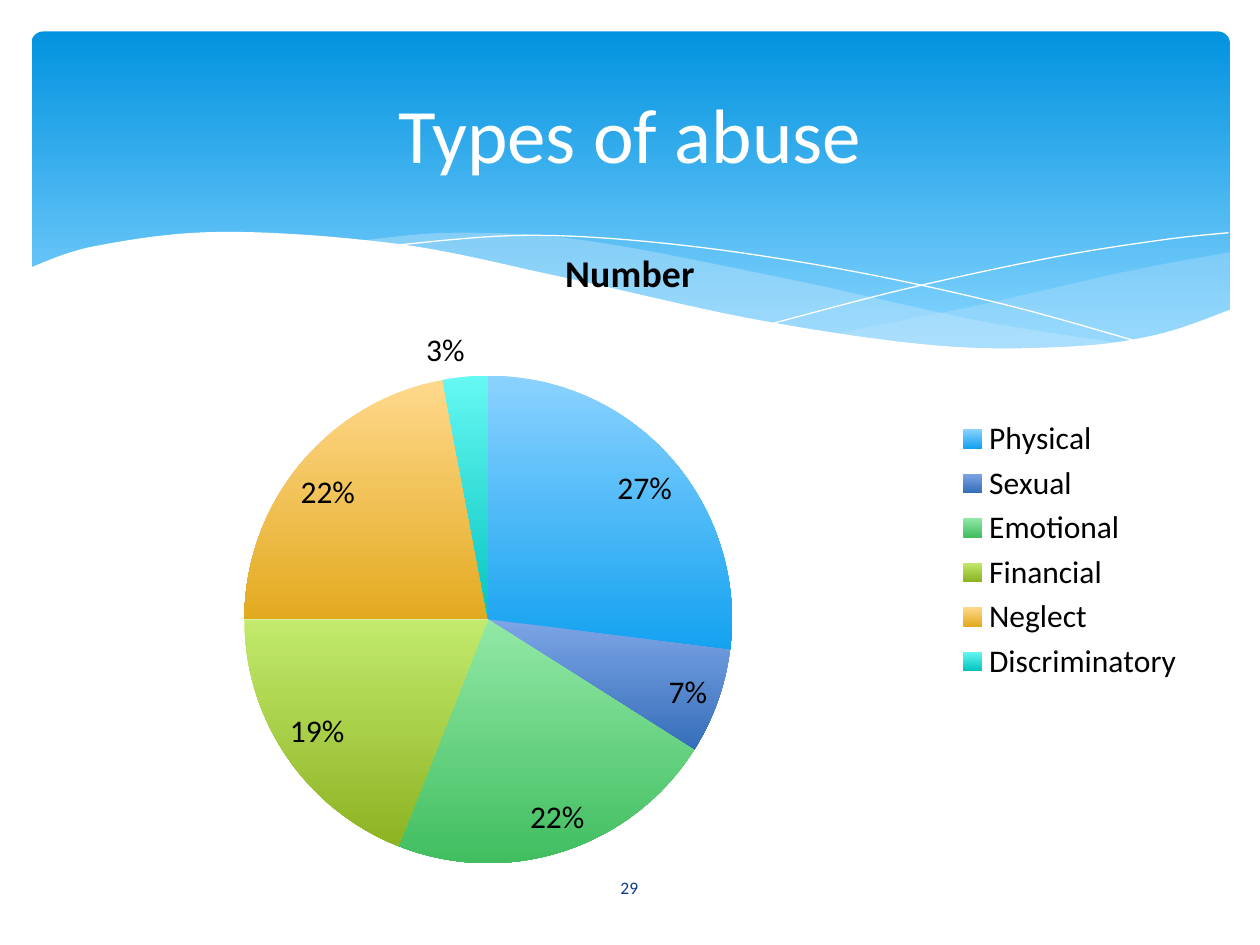
import pptx
import pptx.chart.data
import pptx.dml.color
import pptx.enum.chart
import pptx.enum.shapes
import pptx.enum.text
import pptx.oxml
import pptx.oxml.ns
import pptx.util
import lxml.etree

Pt = pptx.util.Pt


def rgb(value):
    return pptx.dml.color.RGBColor.from_string(value)


def write(frame, text, size=18, color="000000", bold=False):
    frame.text = text
    frame.word_wrap = True
    frame.vertical_anchor = pptx.enum.text.MSO_ANCHOR.MIDDLE
    paragraph = frame.paragraphs[0]
    paragraph.alignment = pptx.enum.text.PP_ALIGN.CENTER
    font = paragraph.runs[0].font
    font.name = "Calibri"
    font.size = Pt(size)
    font.bold = bold
    font.color.rgb = rgb(color)


deck = pptx.Presentation()
deck.slide_width, deck.slide_height = Pt(720), Pt(540)
slide = deck.slides.add_slide(deck.slide_layouts[5])
shapes = slide.shapes

banner = shapes.add_shape(pptx.enum.shapes.MSO_SHAPE.ROUNDED_RECTANGLE,
                          Pt(18), Pt(18), Pt(684.7), Pt(194.4))
banner.adjustments[0] = 0.034
banner.shadow.inherit = False
banner.line.fill.background()
gradients = [(banner.fill, "0293E0", "83D3FE", 0.9)]

left_edge, right_edge, wave_floor = 17, 703, 237
right_start, middle_start, middle_end = (476, 191), (206, 137.5), (643, 196.5)
knots = {
    "right top": [right_start, (561, 174), (642, 155.5), (right_edge, 144)],
    "right bottom": [right_start, (536, 198), (586, 200), (640, 196), (673, 188.5),
                     (right_edge, 178)],
    "middle top": [middle_start, (260, 133), (335, 137.5), (453, 160), (558, 183), middle_end],
    "middle bottom": [middle_start, (291, 152), (408, 178.5), (520, 197.5), (581, 200),
                      middle_end],
    "falling": [(222, 140.5), (300, 134.5), (384, 139.5), (479, 153.5), (572, 173.5),
                (653, 196)],
    "rising": [(441, 185), (518, 165), (602, 147), (665, 137), (702, 133)],
    "white top": [(left_edge, 153), (55, 140.5), (127, 132.5), (228, 139.5), (322, 158.5),
                  (434, 183), (536, 197.5), (612, 198), (662, 191), (right_edge, 177)],
}

# Catmull-Rom
steps = 10
curves = {}
for name, anchors in knots.items():
    padded = [anchors[0], *anchors, anchors[-1]]
    curve = []
    for before, start, end, after in zip(padded, padded[1:], padded[2:], padded[3:]):
        for step in range(steps):
            t = step / steps
            curve.append(tuple(
                Pt(b + t * ((c - a) + t * ((2 * a - 5 * b + 4 * c - d)
                                           + t * (3 * b - a - 3 * c + d))) / 2)
                for a, b, c, d in zip(before, start, end, after)))
    curves[name] = curve + [(Pt(anchors[-1][0]), Pt(anchors[-1][1]))]

white_base = [(Pt(right_edge), Pt(wave_floor)), (Pt(left_edge), Pt(wave_floor))]
bands = [
    (curves["right top"] + curves["right bottom"][::-1], "C6E7FC", 29),
    (curves["middle top"] + curves["middle bottom"][::-1], "C6E7FC", 40),
    (curves["falling"], None, 100),
    (curves["rising"], None, 100),
    (curves["white top"] + white_base, "FFFFFF", 100),
]
for outline, color, opacity in bands:
    builder = shapes.build_freeform(*outline[0])
    builder.add_line_segments(outline[1:], close=color is not None)
    wave = builder.convert_to_shape()
    wave.shadow.inherit = False
    if color is None:
        wave.fill.background()
        wave.line.color.rgb = rgb("FFFFFF")
        wave.line.width = Pt(0)
        continue
    wave.line.fill.background()
    wave.fill.solid()
    wave.fill.fore_color.rgb = rgb(color)
    if opacity < 100:
        tone = wave.element.spPr.find(".//" + pptx.oxml.ns.qn("a:srgbClr"))
        lxml.etree.SubElement(tone, pptx.oxml.ns.qn("a:alpha"), val=str(opacity * 1000))

title = shapes.title
title.left, title.top, title.width, title.height = Pt(36), Pt(26.64), Pt(648), Pt(98.64)
write(title.text_frame, "Types of abuse", size=44, color="FFFFFF")
shapes.element.append(title.element)

abuse_types = [
    ("Physical", 27, "8AD2FF", "14A2F0"),
    ("Sexual", 7, "7DA5E6", "356EB9"),
    ("Emotional", 22, "92E8A6", "41BE60"),
    ("Financial", 19, "C2EA6C", "8CB322"),
    ("Neglect", 22, "FFD98C", "E3AA20"),
    ("Discriminatory", 3, "66F8F2", "05C4C0"),
]
abuse_data = pptx.chart.data.CategoryChartData()
abuse_data.categories = [name for name, share, light, dark in abuse_types]
abuse_data.add_series("Number", [share for name, share, light, dark in abuse_types])
pie = shapes.add_chart(pptx.enum.chart.XL_CHART_TYPE.PIE, Pt(36), Pt(125.28), Pt(648), Pt(378),
                       abuse_data).chart
pie.font.name = "Calibri"
pie.font.size = Pt(18)
pie.font.color.rgb = rgb("000000")
pie.has_title = True
write(pie.chart_title.text_frame, "Number", size=21.6, bold=True)
pie.chart_title.include_in_layout = False
pie.has_legend = True
pie.legend.position = pptx.enum.chart.XL_LEGEND_POSITION.RIGHT
pie.legend.include_in_layout = False

plot = pie.plots[0]
plot.vary_by_categories = True
plot.has_data_labels = True
labels = plot.data_labels
labels.show_percentage = True
labels.show_value = False
labels.number_format = "0%"
labels.number_format_is_linked = False
labels.position = pptx.enum.chart.XL_LABEL_POSITION.BEST_FIT

plot_area = pie.element.chart.plotArea
for old_layout in plot_area.findall(pptx.oxml.ns.qn("c:layout")):
    plot_area.remove(old_layout)
plot_area.insert(0, pptx.oxml.parse_xml(
    f'<c:layout {pptx.oxml.ns.nsdecls("c")}><c:manualLayout><c:layoutTarget val="inner"/>'
    '<c:xMode val="edge"/><c:yMode val="edge"/><c:x val="0.16"/><c:y val="0.23"/>'
    '<c:w val="0.43"/><c:h val="0.75"/></c:manualLayout></c:layout>'))

for index, (name, share, light, dark) in enumerate(abuse_types):
    piece = plot.series[0].points[index].format
    piece.line.fill.background()
    gradients.append((piece.fill, light, dark, 1))

for fill, top_color, bottom_color, end in gradients:
    fill.gradient()
    fill.gradient_angle = 270
    first, last = fill.gradient_stops
    first.color.rgb, first.position = rgb(top_color), 0
    last.color.rgb, last.position = rgb(bottom_color), end

page_number = shapes.add_textbox(Pt(313.92), Pt(492.48), Pt(91.44), Pt(28.8))
write(page_number.text_frame, "29", size=10, color="073E87")

deck.save("out.pptx")
